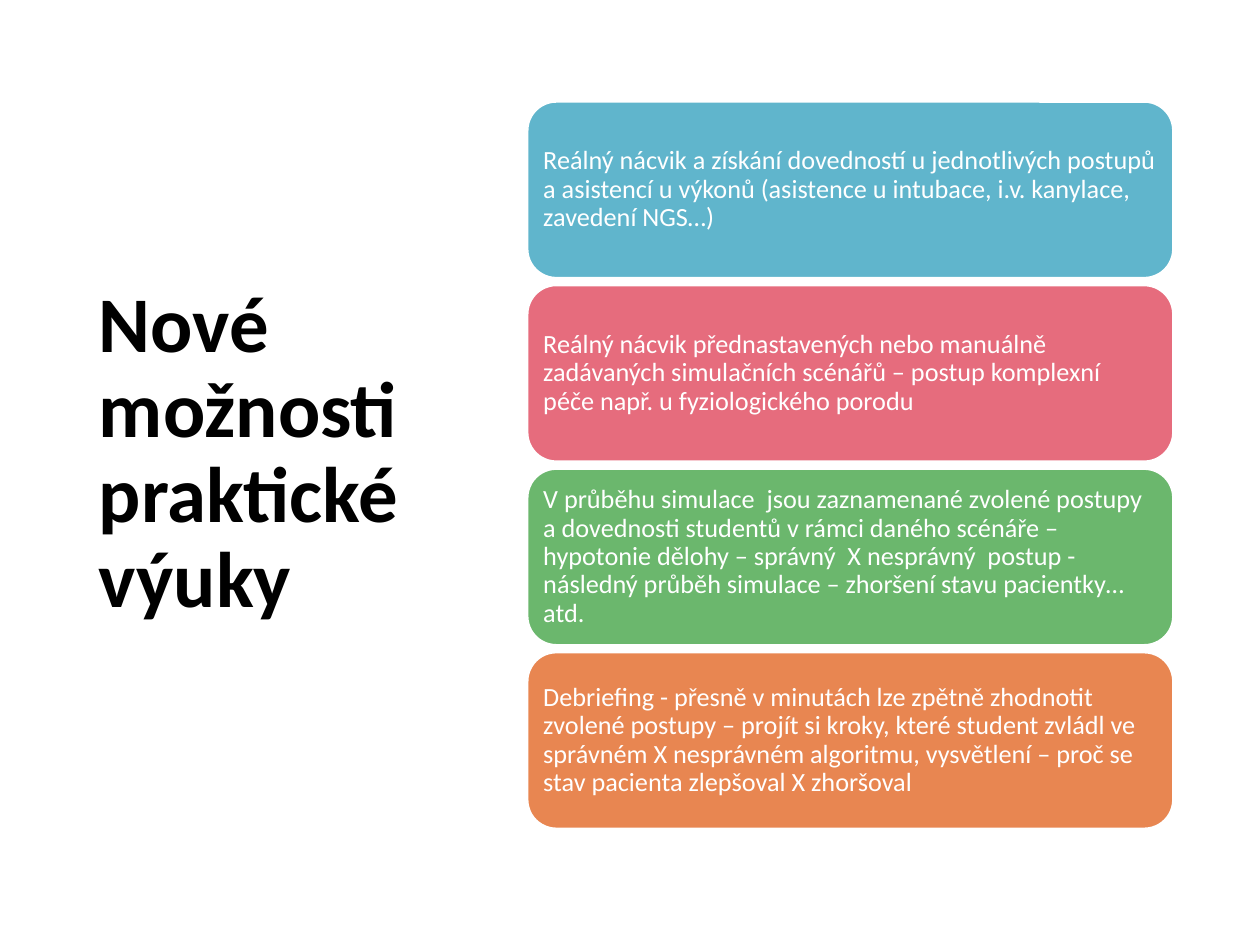
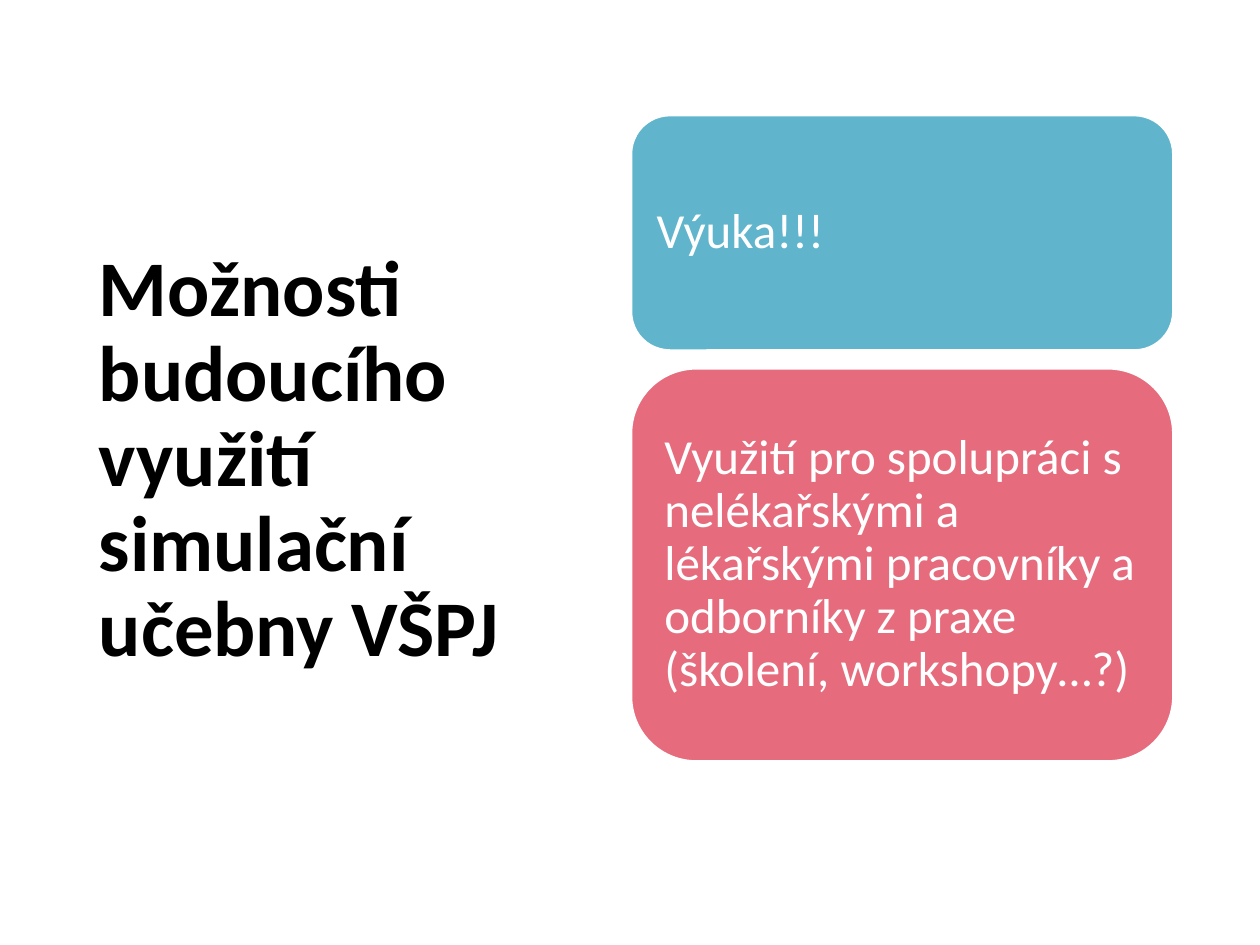
from pptx import Presentation
from pptx.dml.color import RGBColor
from pptx.enum.shapes import MSO_SHAPE as Shape
from pptx.enum.text import MSO_ANCHOR as Anchor, PP_ALIGN as Align
from pptx.util import Pt

FONT = "Calibri"
BLACK, WHITE = "000000", "FFFFFF"
CARD_COLOURS = ["60B5CC", "E66C7D", "6BB76D", "E88651"]
SLIDE_WIDTH, SLIDE_HEIGHT = 720, 540
TITLE_LEFT, TITLE_HEIGHT, TITLE_SIZE = 49.5, 438.5, 45
CARD_RIGHT = 670.8

SLIDES = [
    {
        "title": "Nové možnosti praktické výuky",
        "title_top": 40.5,
        "title_width": 199.5,
        "card_left": 301,
        "card_top": 57.7,
        "gap": 3.4,
        "inset": 4.5,
        "size": 15,
        "cards": [
            ("Reálný nácvik a získání dovedností u jednotlivých postupů a asistencí u výkonů "
             "(asistence u intubace, i.v. kanylace, zavedení NGS…)", 101.5),
            ("Reálný nácvik přednastavených nebo manuálně zadávaných simulačních scénářů – "
             "postup komplexní péče např. u fyziologického porodu", 101.5),
            ("V průběhu simulace  jsou zaznamenané zvolené postupy a dovednosti studentů v rámci "
             "daného scénáře – hypotonie dělohy – správný  X nesprávný  postup - následný průběh "
             "simulace – zhoršení stavu pacientky…atd.", 101.5),
            ("Debriefing - přesně v minutách lze zpětně zhodnotit  zvolené postupy – projít si "
             "kroky, které student zvládl ve správném X nesprávném algoritmu, vysvětlení – proč "
             "se stav pacienta zlepšoval X zhoršoval", 101.5),
        ],
    },
    {
        "title": "Možnosti budoucího využití simulační učebny VŠPJ",
        "title_top": 44,
        "title_width": 287.5,
        "card_left": 360.3,
        "card_top": 65.5,
        "gap": 9.6,
        "inset": 8.4,
        "size": 28,
        "cards": [
            ("Výuka!!!", 135.1),
            ("Využití pro spolupráci s nelékařskými a lékařskými pracovníky a odborníky z praxe "
             "(školení, workshopy…?)", 225.2),
        ],
    },
]


def colour(value):
    """Turn a hex string into a colour."""
    return RGBColor.from_string(value)


def write(shape, text, size, text_colour, inset=None, bold=False):
    """Fill a shape with one left-aligned, vertically centred paragraph."""
    frame = shape.text_frame
    frame.word_wrap = True
    frame.vertical_anchor = Anchor.MIDDLE
    if inset is not None:
        frame.margin_left = frame.margin_right = Pt(inset)
        frame.margin_top = frame.margin_bottom = Pt(inset)
    paragraph = frame.paragraphs[0]
    paragraph.alignment = Align.LEFT
    paragraph.line_spacing = 0.9
    run = paragraph.add_run()
    run.text = text
    run.font.name = FONT
    run.font.size = Pt(size)
    run.font.bold = bold
    run.font.color.rgb = colour(text_colour)


def add_title(slide, content):
    """Place the bold title in the left column."""
    box = slide.shapes.add_textbox(Pt(TITLE_LEFT), Pt(content["title_top"]),
                                   Pt(content["title_width"]), Pt(TITLE_HEIGHT))
    write(box, content["title"], TITLE_SIZE, BLACK, bold=True)


def add_cards(slide, content):
    """Stack the coloured cards in the right column."""
    left, top = content["card_left"], content["card_top"]
    for (text, height), fill in zip(content["cards"], CARD_COLOURS):
        card = slide.shapes.add_shape(Shape.ROUNDED_RECTANGLE, Pt(left), Pt(top),
                                      Pt(CARD_RIGHT - left), Pt(height))
        card.shadow.inherit = False
        card.fill.solid()
        card.fill.fore_color.rgb = colour(fill)
        card.line.color.rgb = colour(WHITE)
        card.line.width = Pt(2)
        write(card, text, content["size"], WHITE, content["inset"])
        top += height + content["gap"]


def main():
    """Build and save the presentation."""
    presentation = Presentation()
    presentation.slide_width = Pt(SLIDE_WIDTH)
    presentation.slide_height = Pt(SLIDE_HEIGHT)
    for content in SLIDES:
        slide = presentation.slides.add_slide(presentation.slide_layouts[6])
        add_title(slide, content)
        add_cards(slide, content)
    presentation.save("out.pptx")


if __name__ == "__main__":
    main()
